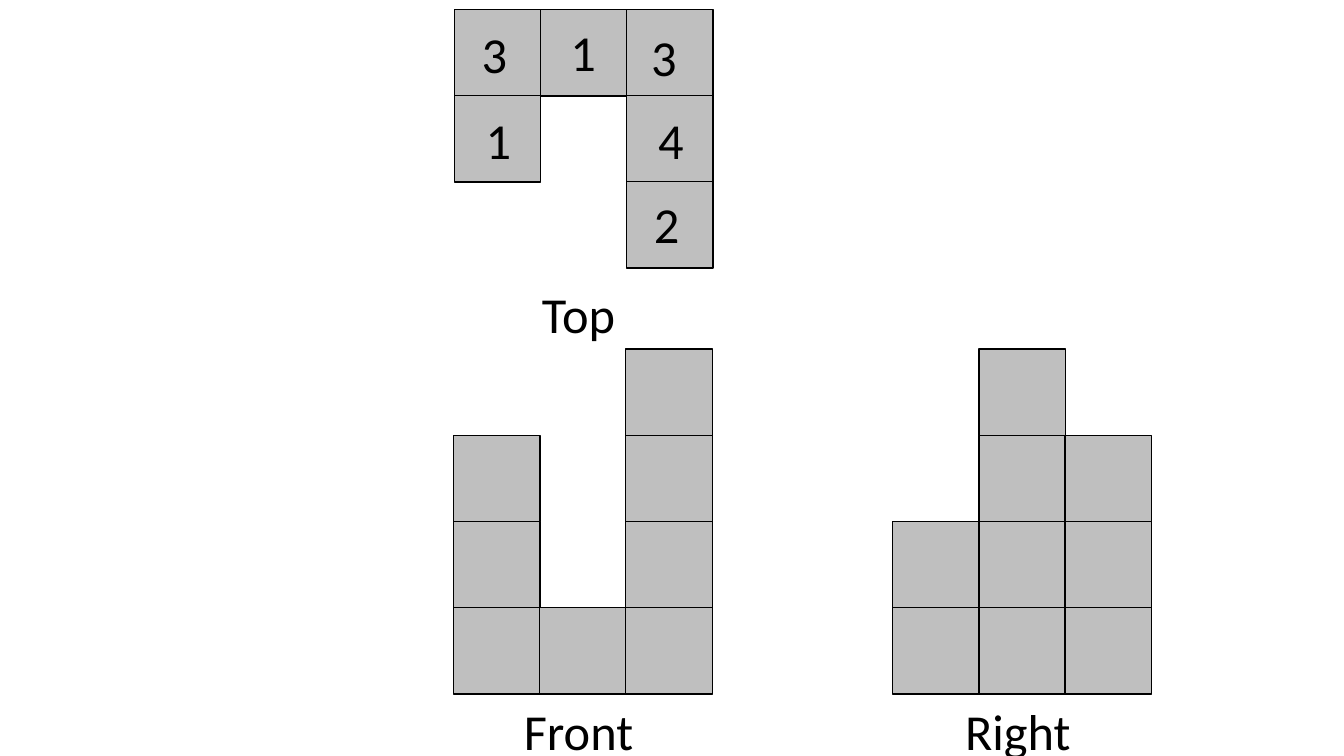
from pptx import Presentation
from pptx.dml.color import RGBColor
from pptx.enum.shapes import MSO_SHAPE
from pptx.enum.text import MSO_AUTO_SIZE, PP_ALIGN
from pptx.util import Cm, Pt

COLORS = {"cube": "BFBFBF", "ink": "000000"}
CUBE = 2.18
PITCH = 2.17
LABEL_HEIGHT = 1.8
DIGIT_WIDTH = 1.3
CAPTION_WIDTH = 4.42

# Each view: caption, caption left and top, grid left and top, rows of cubes
VIEWS = [
    ("Top", 12.37, 7.01, 11.45, 0.24, ["###", "#.#", "..#"]),
    ("Front", 12.37, 17.53, 11.43, 8.8, ["..#", "#.#", "#.#", "###"]),
    ("Right", 23.44, 17.53, 22.5, 8.8, [".#.", ".##", "###", "###"]),
]

# Stack heights written on the top view: text, left, top
STACK_HEIGHTS = [
    ("3", 11.81, 0.46),
    ("1", 14.05, 0.41),
    ("3", 16.08, 0.53),
    ("1", 11.91, 2.62),
    ("4", 16.26, 2.62),
    ("2", 16.15, 4.75),
]

prs = Presentation()
prs.slide_width = Cm(33.87)
prs.slide_height = Cm(19.05)
slide = prs.slides.add_slide(prs.slide_layouts[6])


def add_label(text, left, top, width):
    label = slide.shapes.add_textbox(Cm(left), Cm(top), Cm(width), Cm(LABEL_HEIGHT))
    frame = label.text_frame
    frame.word_wrap = True
    frame.auto_size = MSO_AUTO_SIZE.SHAPE_TO_FIT_TEXT
    paragraph = frame.paragraphs[0]
    paragraph.alignment = PP_ALIGN.CENTER
    run = paragraph.add_run()
    run.text = text
    run.font.name = "Calibri"
    run.font.size = Pt(36)
    run.font.color.rgb = RGBColor.from_string(COLORS["ink"])


for caption, caption_left, caption_top, grid_left, grid_top, rows in VIEWS:
    for row, cells in enumerate(rows):
        for column, cell in enumerate(cells):
            if cell != "#":
                continue
            cube = slide.shapes.add_shape(
                MSO_SHAPE.RECTANGLE,
                Cm(grid_left + column * PITCH), Cm(grid_top + row * PITCH),
                Cm(CUBE), Cm(CUBE),
            )
            cube.shadow.inherit = False
            cube.fill.solid()
            cube.fill.fore_color.rgb = RGBColor.from_string(COLORS["cube"])
            cube.line.color.rgb = RGBColor.from_string(COLORS["ink"])
            cube.line.width = Pt(1)
    add_label(caption, caption_left, caption_top, CAPTION_WIDTH)

for height, left, top in STACK_HEIGHTS:
    add_label(height, left, top, DIGIT_WIDTH)

prs.save("out.pptx")
